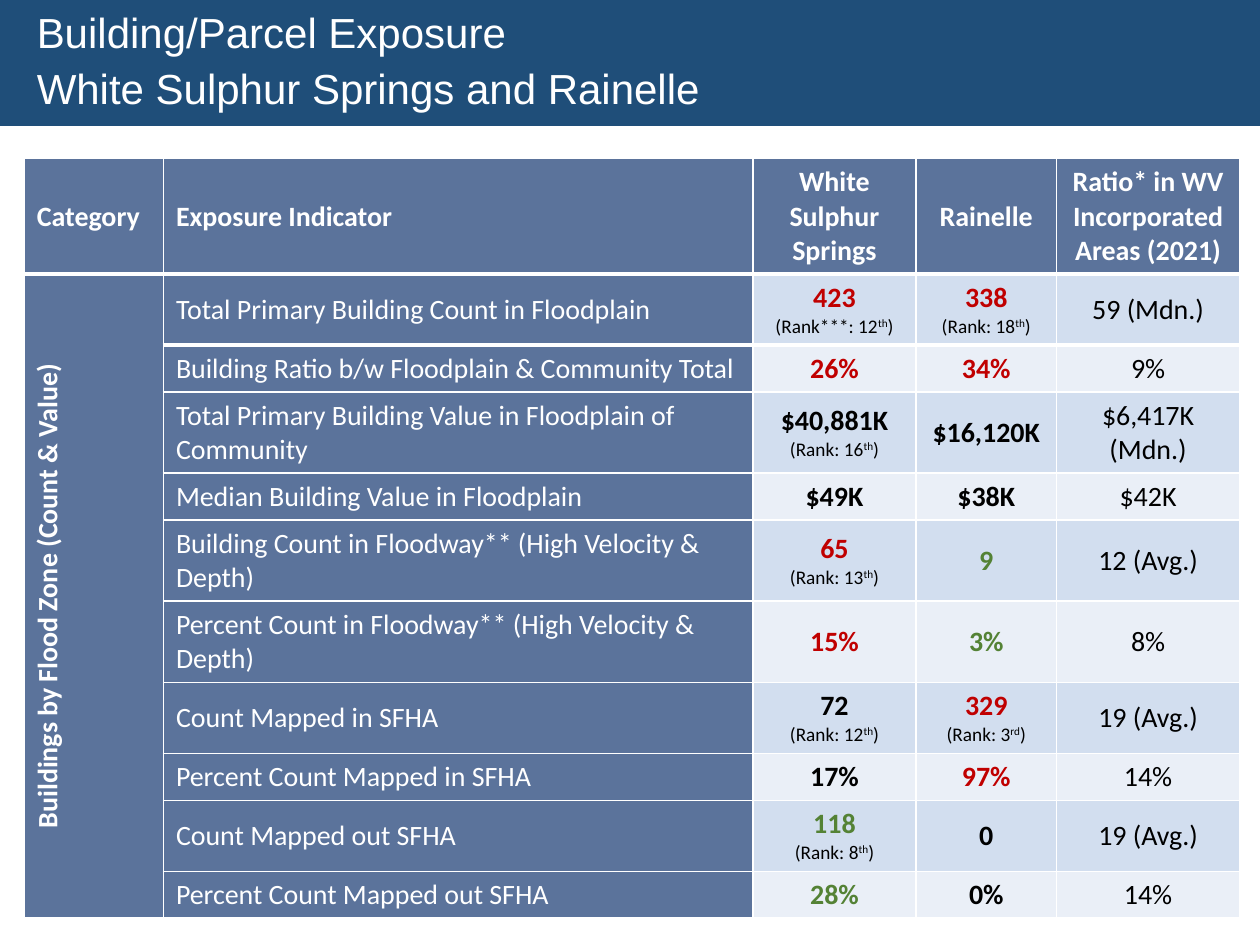
from lxml import etree
from pptx import Presentation, util as u
from pptx.dml.color import RGBColor
from pptx.enum import text
from pptx.oxml.ns import qn

Pt = u.Pt
WHITE, BLACK, RED, GREEN = "FFFFFF", "000000", "C00000", "548235"
NAVY, SLATE, BLUE, PALE = "1F4E79", "5B739B", "D2DEEF", "EAEFF7"
LEFT, CENTER = text.PP_ALIGN.LEFT, text.PP_ALIGN.CENTER


def add_text(p, txt, size=16, color=BLACK, bold=False, font="Calibri", align=CENTER, raised=False):
    p.alignment = align
    r = p.add_run()
    r.text = txt
    f = r.font
    f.size, f.bold, f.name = Pt(size), bold, font
    f.color.rgb = RGBColor.from_string(color)
    if raised:
        f._element.set("baseline", "30000")


def format_cell(c, fill, **borders):
    c.vertical_anchor = text.MSO_ANCHOR.MIDDLE
    tcPr = c._tc.get_or_add_tcPr()
    for side in "LRTB":
        if side in borders:
            ln = etree.SubElement(tcPr, qn(f"a:ln{side}"), w=str(Pt(borders[side])))
            solid = etree.SubElement(ln, qn("a:solidFill"))
            etree.SubElement(solid, qn("a:srgbClr"), val=WHITE)
    c.fill.solid()
    c.fill.fore_color.rgb = RGBColor.from_string(fill)


prs = Presentation()
prs.slide_width, prs.slide_height = Pt(720), Pt(540)
s = prs.slides.add_slide(prs.slide_layouts[5])

sp = s.shapes.title
sp.left, sp.top, sp.width, sp.height = Pt(0), Pt(0), Pt(720), Pt(72)
sp.fill.solid()
sp.fill.fore_color.rgb = RGBColor.from_string(NAVY)
tf = sp.text_frame
tf.auto_size = text.MSO_AUTO_SIZE.NONE
tf.word_wrap = True
tf.vertical_anchor = text.MSO_ANCHOR.MIDDLE
tf.margin_left = Pt(21)
for i, line in enumerate(["Building/Parcel Exposure", "White Sulphur Springs and Rainelle"]):
    p = tf.add_paragraph() if i else tf.paragraphs[0]
    p.line_spacing = 0.9
    p.space_before = Pt(6 * i)
    add_text(p, line, size=24, color=WHITE, font="Arial", align=LEFT)

headers = ["Category", "Exposure Indicator", "White Sulphur Springs", "Rainelle",
           "Ratio* in WV Incorporated Areas (2021)"]
rows = [
    ("Total Primary Building Count in Floodplain",
     ("423", RED, "(Rank***: 12", "th"), ("338", RED, "(Rank: 18", "th"), "59 (Mdn.)"),
    ("Building Ratio b/w Floodplain & Community Total", ("26%", RED), ("34%", RED), "9%"),
    ("Total Primary Building Value in Floodplain of Community",
     ("$40,881K", BLACK, "(Rank: 16", "th"), ("$16,120K", BLACK), "$6,417K (Mdn.)"),
    ("Median Building Value in Floodplain", ("$49K", BLACK), ("$38K", BLACK), "$42K"),
    ("Building Count in Floodway** (High Velocity & Depth)",
     ("65", RED, "(Rank: 13", "th"), ("9", GREEN), "12 (Avg.)"),
    ("Percent Count in Floodway** (High Velocity & Depth)", ("15%", RED), ("3%", GREEN), "8%"),
    ("Count Mapped in SFHA",
     ("72", BLACK, "(Rank: 12", "th"), ("329", RED, "(Rank: 3", "rd"), "19 (Avg.)"),
    ("Percent Count Mapped in SFHA", ("17%", BLACK), ("97%", RED), "14%"),
    ("Count Mapped out SFHA", ("118", GREEN, "(Rank: 8", "th"), ("0", BLACK), "19 (Avg.)"),
    ("Percent Count Mapped out SFHA", ("28%", GREEN), ("0%", BLACK), "14%"),
]
widths = [79.5, 337, 93, 80.5, 104.5]
heights = [65.7, 40.6, 26.5, 46.4, 26.7, 46.4, 46.4, 40.6, 26.6, 40.6, 26.5]

gf = s.shapes.add_table(len(heights), len(widths), Pt(13.9), Pt(90.7), Pt(sum(widths)), Pt(sum(heights)))
tbl = gf.table
tbl._tbl.tblPr.find(qn("a:tableStyleId")).text = "{2D5ABB26-0587-4C30-8999-92F81FD0307C}"
for col, w in zip(tbl.columns, widths):
    col.width = Pt(w)
for row, h in zip(tbl.rows, heights):
    row.height = Pt(h)

for j, header in enumerate(headers):
    c = tbl.cell(0, j)
    format_cell(c, SLATE, L=1, R=1, T=1, B=3)
    add_text(c.text_frame.paragraphs[0], header, color=WHITE, bold=True, align=CENTER if j > 1 else LEFT)

category = tbl.cell(1, 0)
category.merge(tbl.cell(len(rows), 0))
format_cell(category, SLATE, L=1, R=1, T=3, B=1)
category._tc.tcPr.set("vert", "vert270")
add_text(category.text_frame.paragraphs[0], "Buildings by Flood Zone (Count & Value)", color=WHITE, bold=True)

for i, (indicator, *values, ratio) in enumerate(rows, 1):
    edge = {"T": 3 if i == 1 else 1} if i % 2 else {"B": 1}
    for j in range(1, 5):
        fill = SLATE if j == 1 else BLUE if i % 2 else PALE
        format_cell(tbl.cell(i, j), fill, L=1, R=1, **edge)
    add_text(tbl.cell(i, 1).text_frame.paragraphs[0], indicator, color=WHITE, align=LEFT)
    add_text(tbl.cell(i, 4).text_frame.paragraphs[0], ratio)
    for j, (value, color, *rank) in enumerate(values, 2):
        tf = tbl.cell(i, j).text_frame
        add_text(tf.paragraphs[0], value, color=color, bold=True)
        if rank:
            p = tf.add_paragraph()
            add_text(p, rank[0], size=11)
            add_text(p, rank[1], size=11, raised=True)
            add_text(p, ")", size=11)

prs.save("out.pptx")
